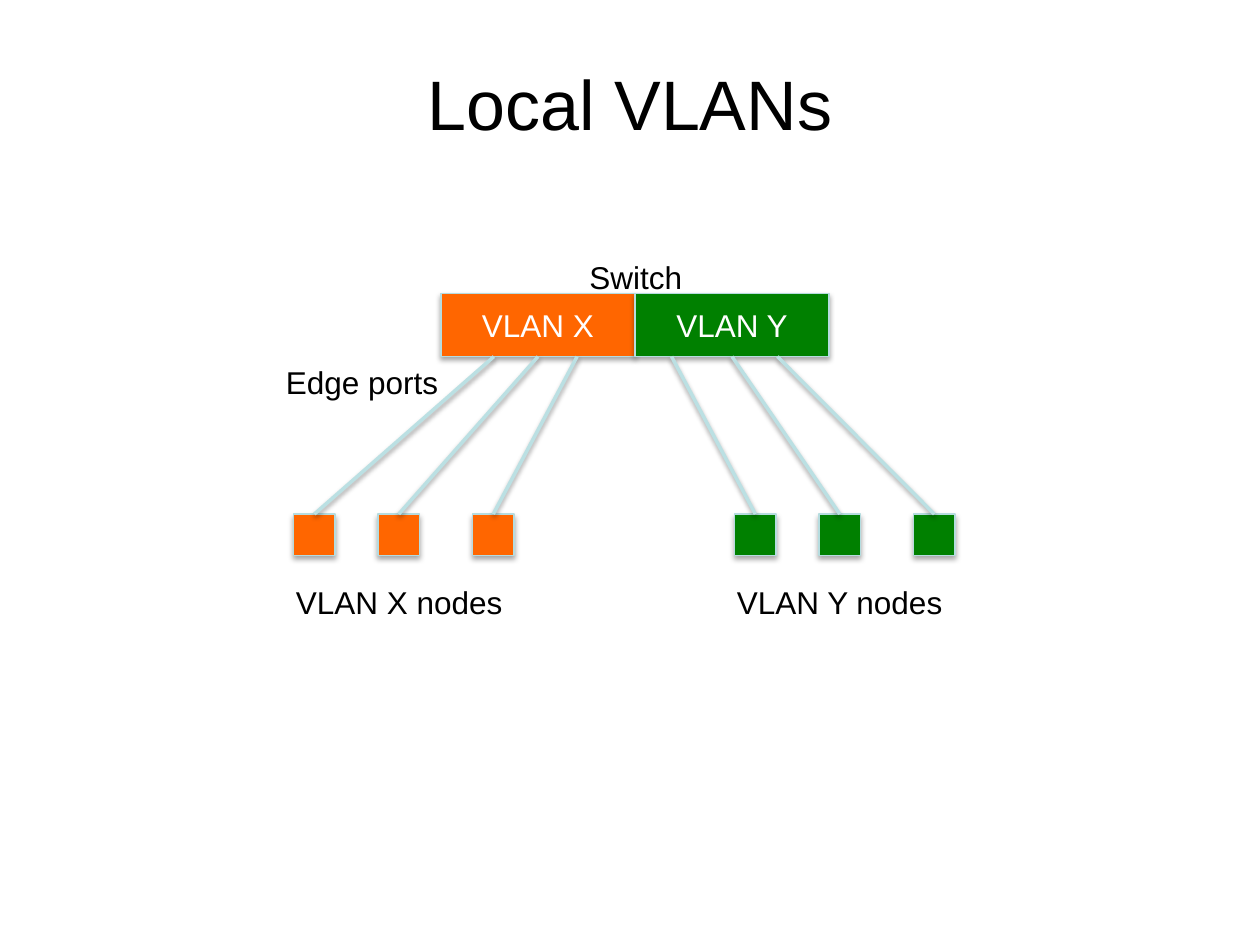
from lxml.etree import SubElement
from pptx import Presentation
from pptx.dml.color import RGBColor
from pptx.enum.shapes import MSO_CONNECTOR, MSO_SHAPE
from pptx.enum.text import MSO_ANCHOR, MSO_AUTO_SIZE, PP_ALIGN
from pptx.oxml.ns import qn
from pptx.util import Inches, Pt

COLORS = {
    "text": "000000",
    "light": "FFFFFF",
    "x": "FF6600",
    "y": "008000",
    "border": "B6DCDF",
    "link": "BBE0E3",
    "shadow": "000000",
}
SWITCH_TOP, SWITCH_W, SWITCH_H = 2.33, 1.54, 0.5
NODE_TOP, NODE_SIZE = 4.08, 0.33
NODE_OFFSETS = (0, 0.67, 1.42)
VLANS = (
    ("x", "VLAN X", 3.5, 2.33, (3.92, 4.27, 4.58)),
    ("y", "VLAN Y", 5.04, 5.83, (5.33, 5.81, 6.17)),
)
LABELS = (
    ("Switch", 4.58, 2, 0.95),
    ("VLAN X nodes", 2.25, 4.58, 1.87),
    ("VLAN Y nodes", 5.75, 4.58, 1.86),
    ("Edge ports", 2.17, 2.83, 1.42),
)


def rgb(name):
    return RGBColor.from_string(COLORS[name])


def add_run(p, text, size, color):
    r = p.add_run()
    r.text = text
    r.font.name = "Arial"
    r.font.size = Pt(size)
    r.font.color.rgb = rgb(color)


def add_shadow(sp, distance, opacity):
    effects = SubElement(sp._element.spPr, qn("a:effectLst"))
    shadow = SubElement(effects, qn("a:outerShdw"), blurRad=str(Pt(3.1)),
                        dist=str(Pt(distance)), dir="5400000", rotWithShape="0")
    color = SubElement(shadow, qn("a:srgbClr"), val=COLORS["shadow"])
    SubElement(color, qn("a:alpha"), val=str(opacity * 1000))


def add_title(s, text):
    title = s.shapes.title
    title.left, title.top = Inches(0.5), Inches(0.3)
    title.width, title.height = Inches(9), Inches(1.03)
    tf = title.text_frame
    tf.vertical_anchor = MSO_ANCHOR.MIDDLE
    p = tf.paragraphs[0]
    p.alignment = PP_ALIGN.CENTER
    add_run(p, text, 40, "text")


def add_box(s, left, top, width, height, color, text=None):
    sp = s.shapes.add_shape(MSO_SHAPE.RECTANGLE, Inches(left), Inches(top),
                            Inches(width), Inches(height))
    sp.fill.solid()
    sp.fill.fore_color.rgb = rgb(color)
    sp.line.color.rgb = rgb("border")
    sp.line.width = Pt(0.75)
    add_shadow(sp, 1.8, 35)
    if text:
        tf = sp.text_frame
        tf.vertical_anchor = MSO_ANCHOR.MIDDLE
        p = tf.paragraphs[0]
        p.alignment = PP_ALIGN.CENTER
        add_run(p, text, 18, "light")
    return sp


def add_link(s, node, port_x):
    link = s.shapes.add_connector(MSO_CONNECTOR.STRAIGHT, node.left, node.top,
                                  Inches(port_x), Inches(SWITCH_TOP + SWITCH_H))
    link.begin_connect(node, 0)
    link.line.color.rgb = rgb("link")
    link.line.width = Pt(2)
    add_shadow(link, 1.6, 38)


def add_label(s, text, left, top, width):
    tf = s.shapes.add_textbox(Inches(left), Inches(top),
                              Inches(width), Inches(0.4)).text_frame
    tf.word_wrap = False
    tf.auto_size = MSO_AUTO_SIZE.SHAPE_TO_FIT_TEXT
    add_run(tf.paragraphs[0], text, 18, "text")


def main():
    prs = Presentation()
    prs.slide_width, prs.slide_height = Inches(10), Inches(7.5)
    s = prs.slides.add_slide(prs.slide_layouts[5])
    add_title(s, "Local VLANs")
    for color, name, left, _, _ in VLANS:
        add_box(s, left, SWITCH_TOP, SWITCH_W, SWITCH_H, color, name)
    for color, _, _, left, ports in VLANS:
        nodes = [add_box(s, left + offset, NODE_TOP, NODE_SIZE, NODE_SIZE, color)
                 for offset in NODE_OFFSETS]
        for node, port_x in zip(nodes, ports):
            add_link(s, node, port_x)
    for label in LABELS:
        add_label(s, *label)
    prs.save("out.pptx")


if __name__ == "__main__":
    main()
